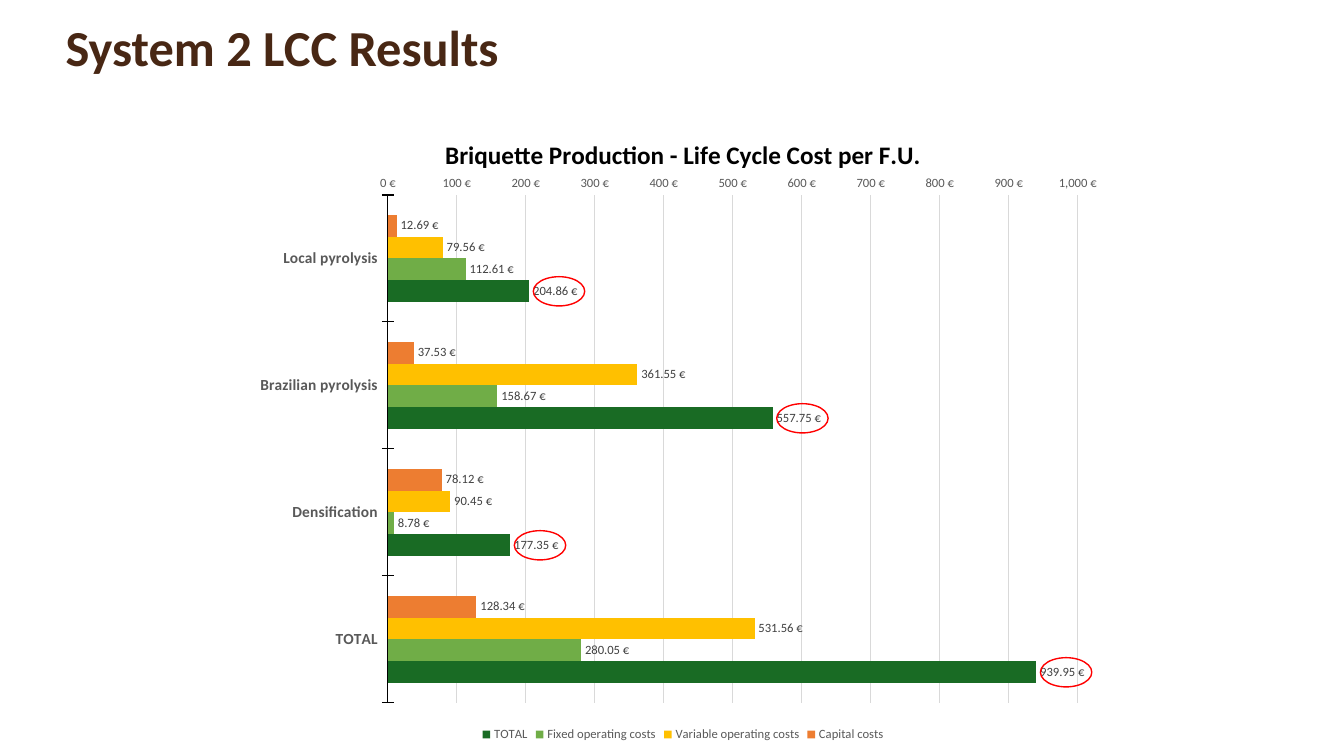
from lxml import etree
from pptx import Presentation
from pptx.chart.data import CategoryChartData
from pptx.dml.color import RGBColor
from pptx.enum.chart import XL_CHART_TYPE, XL_LABEL_POSITION, XL_LEGEND_POSITION, XL_TICK_MARK
from pptx.enum.shapes import MSO_SHAPE
from pptx.enum.text import MSO_ANCHOR, MSO_AUTO_SIZE, PP_ALIGN
from pptx.oxml.ns import qn
from pptx.util import Inches, Pt

BAR = XL_CHART_TYPE.BAR_CLUSTERED
OUTSIDE = XL_LABEL_POSITION.OUTSIDE_END
BOTTOM = XL_LEGEND_POSITION.BOTTOM
NO_TICK, CROSS = XL_TICK_MARK.NONE, XL_TICK_MARK.CROSS

BROWN = RGBColor(0x48, 0x27, 0x14)
BLACK = RGBColor(0, 0, 0)
GREY = RGBColor(0x59, 0x59, 0x59)
DARK_GREY = RGBColor(0x40, 0x40, 0x40)
GRID = RGBColor(0xD9, 0xD9, 0xD9)
RED = RGBColor(0xFF, 0, 0)
ORANGE = RGBColor(0xED, 0x7D, 0x31)
YELLOW = RGBColor(0xFF, 0xC0, 0)
LIGHT_GREEN = RGBColor(0x70, 0xAD, 0x47)
DARK_GREEN = RGBColor(0x19, 0x6B, 0x24)

TITLE = "System 2 LCC Results"
CHART_TITLE = "Briquette Production - Life Cycle Cost per F.U."
STAGES = ["Local pyrolysis", "Brazilian pyrolysis", "Densification", "TOTAL"]
TOTALS = (204.86, 557.75, 177.35, 939.95)
COSTS = [
    ("Capital costs", (12.69, 37.53, 78.12, 128.34), ORANGE),
    ("Variable operating costs", (79.56, 361.55, 90.45, 531.56), YELLOW),
    ("Fixed operating costs", (112.61, 158.67, 8.78, 280.05), LIGHT_GREEN),
    ("TOTAL", TOTALS, DARK_GREEN),
]
AXIS_FORMAT = '#,##0\\ "€"'
LABEL_FORMAT = '#,##0.00\\ "€"'
AXIS_MAX = 1000

CHART_X, CHART_Y, CHART_W, CHART_H = 2.52, 1.14, 8.51, 6.26
PLOT = {"x": 0.156, "y": 0.127, "w": 0.804, "h": 0.805}
RING_W, RING_H = 0.51, 0.29


def style(font, size, color, bold=False):
    font.name = "Calibri"
    font.size = Pt(size)
    font.bold = bold
    font.color.rgb = color


def write(tf, text, size, color, bold=False, align=None, spacing=None):
    p = tf.paragraphs[0]
    p.alignment = align
    p.line_spacing = spacing
    r = p.add_run()
    r.text = text
    style(r.font, size, color, bold)


def place_plot(chart):
    area = chart._chartSpace.chart.plotArea
    for old in area.findall(qn("c:layout")):
        area.remove(old)
    layout = etree.Element(qn("c:layout"))
    manual = etree.SubElement(layout, qn("c:manualLayout"))
    settings = [("layoutTarget", "inner"), ("xMode", "edge"), ("yMode", "edge")]
    for tag, val in settings + list(PLOT.items()):
        etree.SubElement(manual, qn("c:" + tag)).set("val", str(val))
    area.insert(0, layout)


def add_cost_chart(s):
    data = CategoryChartData(number_format=LABEL_FORMAT)
    data.categories = STAGES
    for name, values, _ in COSTS:
        data.add_series(name, values)
    box = [Inches(n) for n in (CHART_X, CHART_Y, CHART_W, CHART_H)]
    chart = s.shapes.add_chart(BAR, *box, data).chart
    style(chart.font, 10, BLACK)
    write(chart.chart_title.text_frame, CHART_TITLE, 18, BLACK, bold=True)
    chart.chart_title.include_in_layout = False
    chart.has_legend = True
    chart.legend.position = BOTTOM
    chart.legend.include_in_layout = False
    style(chart.legend.font, 9, GREY)

    stages = chart.category_axis
    stages.reverse_order = True
    stages.major_tick_mark = CROSS
    stages.minor_tick_mark = NO_TICK
    stages.format.line.color.rgb = BLACK
    stages.format.line.width = Pt(0.75)
    style(stages.tick_labels.font, 11, GREY, bold=True)

    euros = chart.value_axis
    euros.minimum_scale, euros.maximum_scale, euros.major_unit = 0, AXIS_MAX, 100
    euros.major_tick_mark = euros.minor_tick_mark = NO_TICK
    euros.format.line.fill.background()
    euros.major_gridlines.format.line.color.rgb = GRID
    euros.major_gridlines.format.line.width = Pt(0.75)
    euros.tick_labels.number_format = AXIS_FORMAT
    euros.tick_labels.number_format_is_linked = False
    style(euros.tick_labels.font, 9, GREY)

    plot = chart.plots[0]
    plot.gap_width = 182
    plot.overlap = 0
    plot.vary_by_categories = False
    for series, (_, _, color) in zip(plot.series, COSTS):
        series.invert_if_negative = False
        series.format.fill.solid()
        series.format.fill.fore_color.rgb = color
        labels = series.data_labels
        labels.show_value = True
        labels.position = OUTSIDE
        labels.number_format = LABEL_FORMAT
        labels.number_format_is_linked = False
        style(labels.font, 9, DARK_GREY)
    place_plot(chart)


def ring_totals(s):
    left = CHART_X + PLOT["x"] * CHART_W + 0.04
    top = CHART_Y + PLOT["y"] * CHART_H + 0.81
    scale = PLOT["w"] * CHART_W / AXIS_MAX
    step = PLOT["h"] * CHART_H / len(STAGES)
    for i, total in enumerate(TOTALS):
        sp = s.shapes.add_shape(MSO_SHAPE.OVAL, Inches(left + total * scale),
                                Inches(top + i * step), Inches(RING_W), Inches(RING_H))
        sp.shadow.inherit = False
        sp.fill.background()
        sp.line.color.rgb = RED
        sp.line.width = Pt(1)


def main():
    prs = Presentation()
    prs.slide_width, prs.slide_height = Inches(13.33), Inches(7.5)
    s = prs.slides.add_slide(prs.slide_layouts[5])
    title = s.shapes.title
    title.left, title.top = Inches(0.55), Inches(0.1)
    title.width, title.height = Inches(10.02), Inches(0.79)
    tf = title.text_frame
    tf.word_wrap = True
    tf.auto_size = MSO_AUTO_SIZE.NONE
    tf.vertical_anchor = MSO_ANCHOR.MIDDLE
    write(tf, TITLE, 36, BROWN, bold=True, align=PP_ALIGN.LEFT, spacing=0.9)
    add_cost_chart(s)
    ring_totals(s)
    prs.save("out.pptx")


if __name__ == "__main__":
    main()
